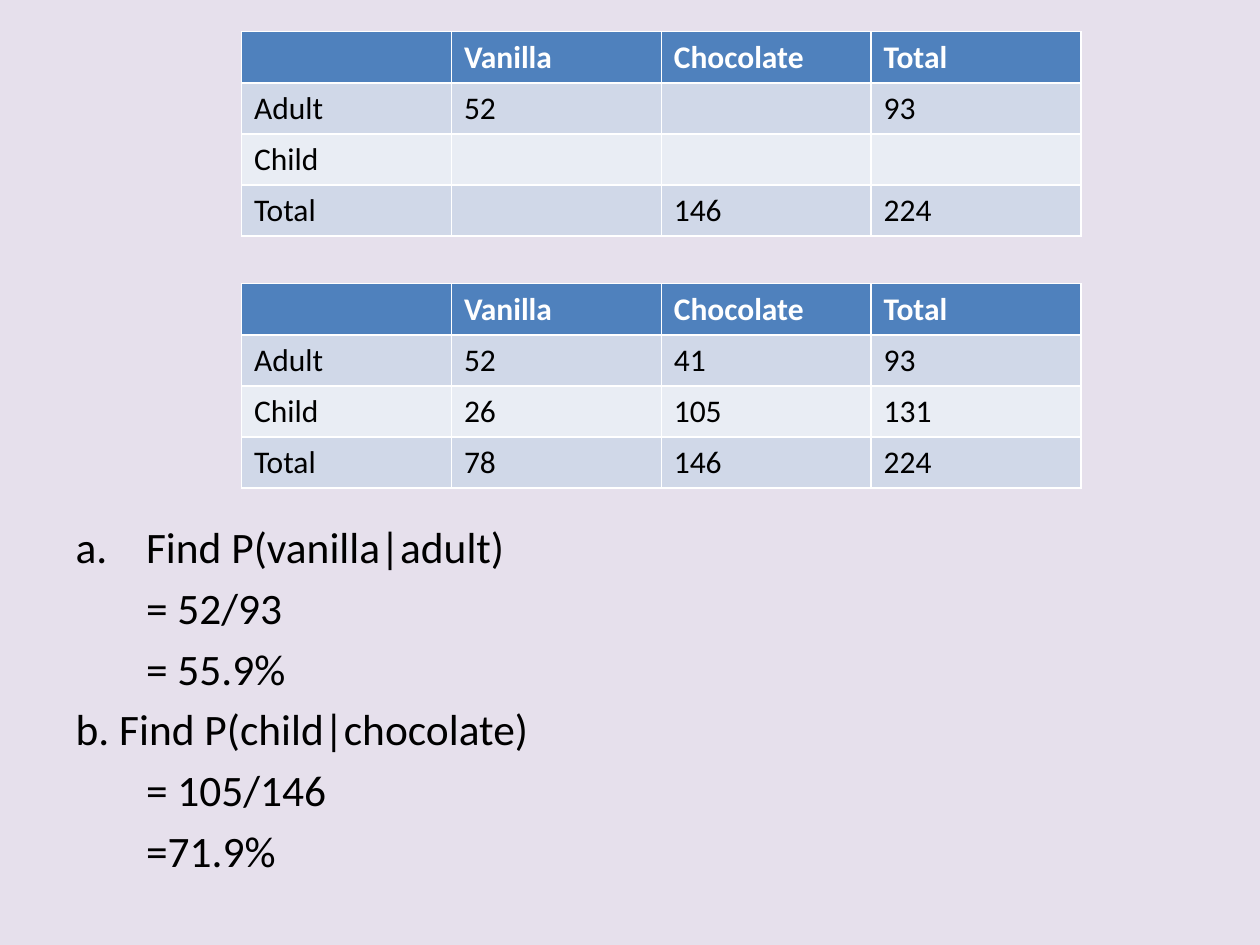
import dataclasses

import lxml.etree
import pptx
import pptx.dml.color
import pptx.enum.text
import pptx.oxml.ns
import pptx.slide
import pptx.util
from pptx.util import Cm

FONT = "Calibri"
COLOURS = {
    "background": "E6E0EC",
    "header": "4F81BD",
    "odd row": "D0D8E8",
    "even row": "E9EDF4",
    "header text": "FFFFFF",
    "text": "000000",
}
HEADINGS = ("", "Vanilla", "Chocolate", "Total")
TABLE_LEFT = Cm(4.87)
COLUMN_WIDTH = Cm(4.23)
ROW_HEIGHT = Cm(1.03)
HANGING = Cm(1.42)


@dataclasses.dataclass
class FlavourTable:
    top: pptx.util.Length
    rows: tuple[tuple[str, ...], ...]


@dataclasses.dataclass
class Line:
    text: str
    indented: bool = False
    numbered: bool = False


TABLES = (
    FlavourTable(Cm(0.64), (
        ("Adult", "52", "", "93"),
        ("Child", "", "", ""),
        ("Total", "", "146", "224"),
    )),
    FlavourTable(Cm(5.72), (
        ("Adult", "52", "41", "93"),
        ("Child", "26", "105", "131"),
        ("Total", "78", "146", "224"),
    )),
)
LINES = (
    Line("Find P(vanilla|adult)", numbered=True),
    Line("= 52/93", indented=True),
    Line("= 55.9%", indented=True),
    Line("b. Find P(child|chocolate)"),
    Line("= 105/146", indented=True),
    Line("=71.9%", indented=True),
)


def colour(name: str) -> pptx.dml.color.RGBColor:
    return pptx.dml.color.RGBColor.from_string(COLOURS[name])


def format_font(paragraph, size: float, colour_name: str, bold: bool = False) -> None:
    font = paragraph.font
    font.name = FONT
    font.size = pptx.util.Pt(size)
    font.bold = bold
    font.color.rgb = colour(colour_name)


def set_indent(paragraph, line: Line) -> None:
    """Set the left margin, the hanging indent and the number of a line."""
    properties = paragraph._p.get_or_add_pPr()
    properties.set("marL", str(HANGING))
    properties.set("indent", str(0 if line.indented else -HANGING))
    tag = "a:buAutoNum" if line.numbered else "a:buNone"
    bullet = lxml.etree.SubElement(properties, pptx.oxml.ns.qn(tag))
    if line.numbered:
        bullet.set("type", "alphaLcPeriod")


def fill_body(body) -> None:
    body.left, body.top = Cm(1.27), Cm(10.36)
    body.width, body.height = Cm(22.86), Cm(6.65)
    frame = body.text_frame
    frame.text = "\n".join(line.text for line in LINES)
    frame.auto_size = pptx.enum.text.MSO_AUTO_SIZE.NONE
    for paragraph, line in zip(frame.paragraphs, LINES):
        set_indent(paragraph, line)
        format_font(paragraph, 24.8, "text")


def draw_table(slide: pptx.slide.Slide, flavour_table: FlavourTable) -> None:
    rows = (HEADINGS, *flavour_table.rows)
    table = slide.shapes.add_table(
        len(rows), len(HEADINGS), TABLE_LEFT, flavour_table.top,
        COLUMN_WIDTH * len(HEADINGS), ROW_HEIGHT * len(rows),
    ).table
    for row_index, values in enumerate(rows):
        is_header = row_index == 0
        band = "header" if is_header else "odd row" if row_index % 2 else "even row"
        for column_index, value in enumerate(values):
            cell = table.cell(row_index, column_index)
            cell.text = value
            cell.fill.solid()
            cell.fill.fore_color.rgb = colour(band)
            format_font(cell.text_frame.paragraphs[0], 18,
                        "header text" if is_header else "text", is_header)


def main() -> None:
    presentation = pptx.Presentation()
    presentation.slide_width, presentation.slide_height = Cm(25.4), Cm(19.05)
    slide = presentation.slides.add_slide(presentation.slide_layouts[1])
    slide.background.fill.solid()
    slide.background.fill.fore_color.rgb = colour("background")
    title = slide.shapes.title.element
    title.getparent().remove(title)
    fill_body(slide.placeholders[1])
    for flavour_table in TABLES:
        draw_table(slide, flavour_table)
    presentation.save("out.pptx")


if __name__ == "__main__":
    main()
